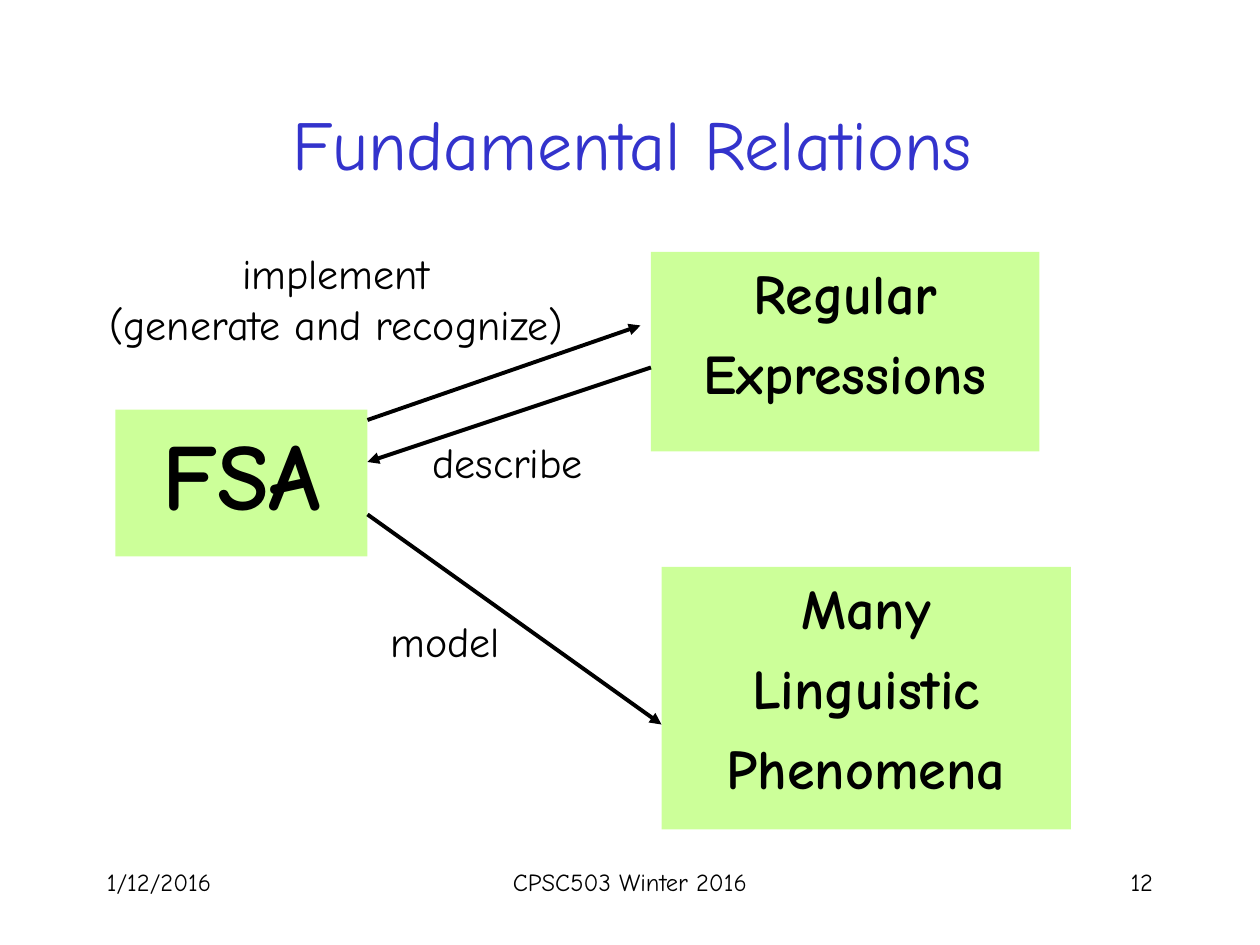
from dataclasses import dataclass

from lxml.etree import SubElement
from pptx import Presentation
from pptx.dml.color import RGBColor
from pptx.enum.shapes import MSO_CONNECTOR, MSO_SHAPE
from pptx.enum.text import MSO_ANCHOR, PP_ALIGN
from pptx.oxml.ns import qn
from pptx.slide import Slide
from pptx.util import Inches, Length, Pt

FONT = "Comic Neue"
BLACK, BLUE, GREEN = "000000", "3333CC", "CCFF99"
CELLS_PER_INCH = 12


@dataclass
class Block:
    col: float
    row: float
    cols: float
    rows: float
    lines: tuple[str, ...]
    size: float
    align: PP_ALIGN = PP_ALIGN.CENTER
    color: str = BLACK
    fill: str | None = None
    bold: bool = False
    gap: float = 0
    anchor: MSO_ANCHOR = MSO_ANCHOR.TOP


@dataclass
class Arrow:
    start: tuple[float, float]
    end: tuple[float, float]
    arrowhead: str = "tailEnd"


def grid(n: float) -> Length:
    return Inches(n / CELLS_PER_INCH)


def rgb(value: str) -> RGBColor:
    return RGBColor.from_string(value)


def draw_block(s: Slide, b: Block) -> None:
    frame = [grid(n) for n in (b.col, b.row, b.cols, b.rows)]
    if b.fill:
        sp = s.shapes.add_shape(MSO_SHAPE.RECTANGLE, *frame)
        sp.shadow.inherit = False
        sp.fill.solid()
        sp.fill.fore_color.rgb = rgb(b.fill)
        sp.line.fill.background()
    else:
        sp = s.shapes.add_textbox(*frame)
    tf = sp.text_frame
    tf.word_wrap = True
    tf.vertical_anchor = b.anchor
    for i, line in enumerate(b.lines):
        p = tf.add_paragraph() if i else tf.paragraphs[0]
        p.alignment = b.align
        if i:
            p.space_before = Pt(b.gap)
        r = p.add_run()
        r.text = line
        r.font.name = FONT
        r.font.size = Pt(b.size)
        r.font.bold = b.bold
        r.font.color.rgb = rgb(b.color)


def draw_arrow(s: Slide, a: Arrow) -> None:
    points = [grid(n) for n in (*a.start, *a.end)]
    c = s.shapes.add_connector(MSO_CONNECTOR.STRAIGHT, *points)
    c.line.color.rgb = rgb(BLACK)
    c.line.width = Pt(2.25)
    SubElement(c.line._get_or_add_ln(), qn(f"a:{a.arrowhead}"), type="triangle")
    SubElement(c._element.spPr, qn("a:effectLst"))


def concept(col: float, row: float, cols: float, rows: float, lines: tuple[str, ...], size: float) -> Block:
    return Block(col, row, cols, rows, lines, size, fill=GREEN, bold=True, gap=7.5)


BLOCKS = [
    Block(9, 82, 25, 6, ("1/12/2016",), 14, PP_ALIGN.LEFT),
    Block(41, 82, 38, 6, ("CPSC503 Winter 2016",), 14),
    Block(86, 82, 25, 6, ("12",), 14, PP_ALIGN.RIGHT),
    Block(9.2, 6.1, 102, 15, ("Fundamental Relations",), 40, color=BLUE, anchor=MSO_ANCHOR.MIDDLE),
    concept(11, 39, 24, 14, ("FSA",), 54),
    concept(62, 24, 37, 19, ("Regular", "Expressions"), 32),
    concept(63, 54, 39, 25, ("Many", "Linguistic", "Phenomena"), 32),
]
ARROWS = [
    Arrow((35, 40), (61, 31)),
    Arrow((35, 44), (62, 35), "headEnd"),
    Arrow((35, 49), (63, 69)),
]
LABELS = [
    Block(36, 58, 15.2, 6, ("model",), 24, PP_ALIGN.LEFT),
    Block(6, 23, 52, 10.8, ("implement", "(generate and recognize)"), 24),
    Block(40, 41, 22, 6, ("describe",), 24, PP_ALIGN.LEFT),
]


def main() -> None:
    prs = Presentation()
    prs.slide_width, prs.slide_height = grid(120), grid(90)
    s = prs.slides.add_slide(prs.slide_layouts[6])
    for block in BLOCKS:
        draw_block(s, block)
    for arrow in ARROWS:
        draw_arrow(s, arrow)
    for label in LABELS:
        draw_block(s, label)
    prs.save("out.pptx")


if __name__ == "__main__":
    main()
